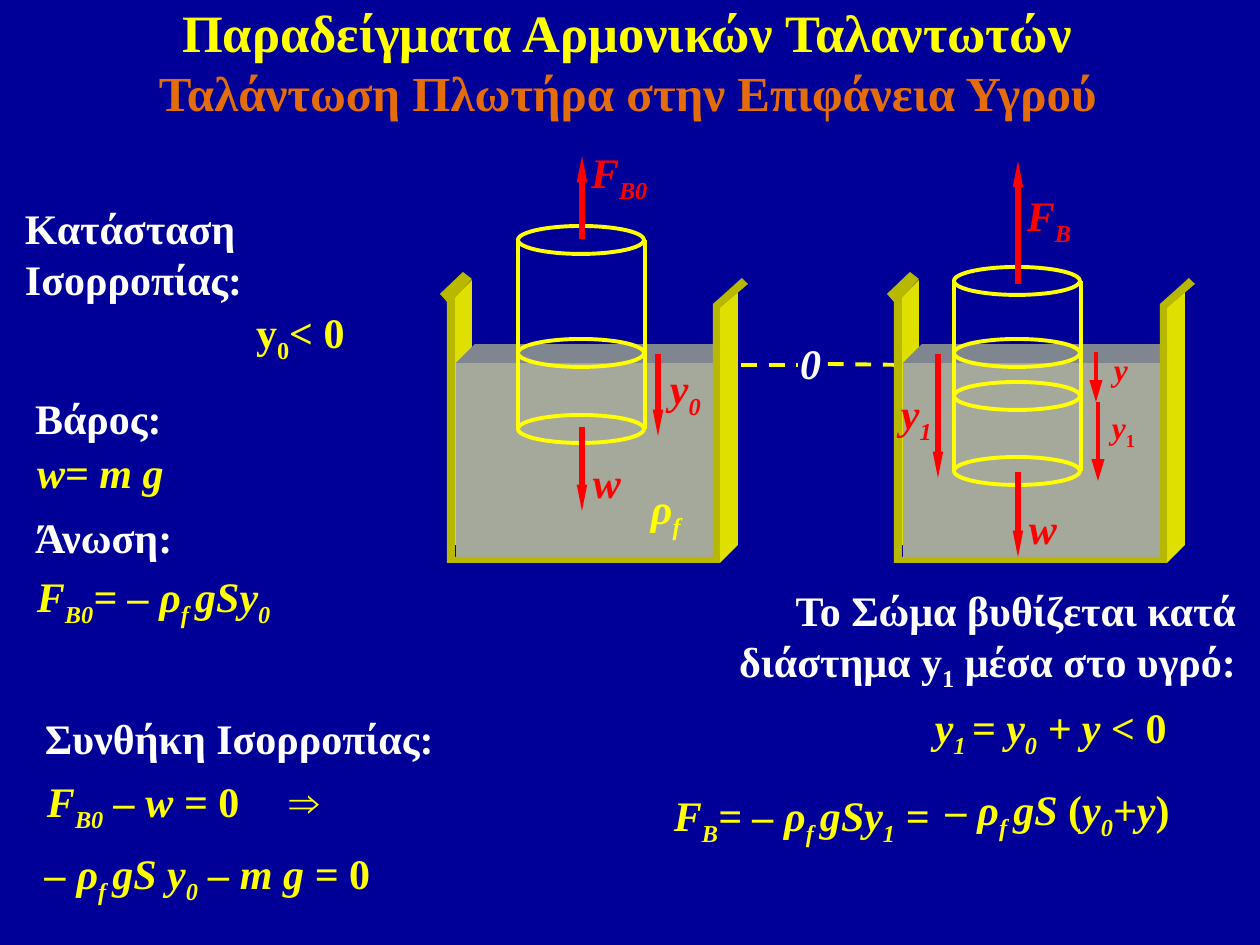
from dataclasses import dataclass

from lxml.etree import SubElement
from pptx import Presentation
from pptx.dml.color import RGBColor
from pptx.enum.dml import MSO_LINE
from pptx.enum.shapes import MSO_CONNECTOR, MSO_SHAPE
from pptx.enum.text import MSO_ANCHOR, MSO_AUTO_SIZE, PP_ALIGN
from pptx.oxml.ns import qn
from pptx.util import Emu, Pt

EMU_PER_PX = 914400 / 126
FONT = "Times New Roman"
NAVY = RGBColor(0x00, 0x00, 0x99)
YELLOW = RGBColor(0xFF, 0xFF, 0x00)
ORANGE = RGBColor(0xE4, 0x6C, 0x0A)
WHITE = RGBColor(0xFF, 0xFF, 0xFF)
RED = RGBColor(0xFF, 0x00, 0x00)
WALL_FRONT = RGBColor(0xB8, 0xB8, 0x00)
WALL_SIDE = RGBColor(0xE0, 0xE0, 0x00)
WATER_FRONT = RGBColor(0xA5, 0xA9, 0x9B)
WATER_TOP = RGBColor(0x80, 0x86, 0x90)


@dataclass
class Label:
    """Text in which "_" switches subscript and "/" switches italic."""
    text: str
    left: int
    top: int
    width: int
    color: RGBColor = YELLOW
    size: int = 24
    height: int = 50
    align: PP_ALIGN = PP_ALIGN.LEFT


@dataclass
class Line:
    x1: int
    y1: int
    x2: int
    y2: int
    color: RGBColor = RED
    weight: float = 3
    head_width: str = "sm"


@dataclass
class Cylinder:
    left: int
    rings: tuple[int, ...]


@dataclass
class Face:
    color: RGBColor
    points: tuple[tuple[int, int], ...]


TANK_STEP = 447
TANK_FACES = (
    Face(WALL_SIDE, ((451, 301), (472, 280), (472, 545), (451, 545))),
    Face(WATER_TOP, ((456, 363), (475, 344), (733, 344), (714, 363))),
    Face(WATER_FRONT, ((456, 363), (714, 363), (714, 557), (456, 557))),
    Face(WALL_FRONT, ((440, 294), (463, 272), (472, 279), (455, 298), (455, 557),
                      (719, 557), (719, 563), (447, 563), (447, 302))),
    Face(WALL_SIDE, ((720, 305), (738, 288), (738, 545), (720, 563))),
    Face(WALL_FRONT, ((713, 304), (742, 278), (748, 284), (720, 308),
                      (720, 563), (713, 563))),
)

RING_WIDTH, RING_HEIGHT = 126, 28
CYLINDERS = (
    Cylinder(518, (226, 339, 415)),
    Cylinder(954, (267, 339, 382, 457)),
)

LEVEL_LINES = (
    Line(714, 365, 798, 365, YELLOW, 2.25),
    Line(828, 364, 906, 365, YELLOW, 2.25),
)

ARROWS = (
    Line(582, 239, 582, 156),
    Line(582, 427, 582, 511),
    Line(658, 354, 658, 436),
    Line(1018, 284, 1018, 161),
    Line(1018, 472, 1018, 557),
    Line(938, 354, 938, 478),
    Line(1096, 352, 1096, 402, weight=2.5, head_width="med"),
    Line(1098, 402, 1098, 481, weight=2.5, head_width="med"),
)

LABELS = (
    Label("Κατάσταση\nΙσορροπίας:", 25, 203, 266, WHITE, height=102),
    Label("y_0_< 0", 256, 307, 107),
    Label("Βάρος:", 35, 393, 156, WHITE),
    Label("/w= m g", 37, 447, 247),
    Label("Άνωση:", 35, 512, 156, WHITE),
    Label("/F_B0_= – ρ_f _gSy_0", 37, 571, 265),
    Label("Συνθήκη Ισορροπίας:", 45, 713, 410, WHITE),
    Label("/F_B0_ – w = /0", 47, 776, 220),
    Label("/⇒", 290, 776, 50),
    Label("/– ρ_f _gS y_0_ – m g = /0", 45, 848, 348),
    Label("Το Σώμα βυθίζεται κατά διάστημα y_1_ μέσα στο υγρό:",
          665, 585, 571, WHITE, height=102, align=PP_ALIGN.RIGHT),
    Label("/y_1 _= y_0_ + y < /0", 935, 702, 243),
    Label("/F_B_= – ρ_f _gSy_1_ =", 674, 790, 265),
    Label("/– ρ_f _gS /(/y_0_+y/)", 946, 784, 242),
    Label("/0", 800, 338, 30, WHITE),
    Label("/F_B0", 591, 147, 68, RED),
    Label("/F_B", 1027, 190, 50, RED),
    Label("/w", 593, 457, 40, RED),
    Label("/w", 1029, 503, 40, RED),
    Label("/ρ_f", 651, 483, 40),
    Label("/y_0", 670, 363, 50, RED),
    Label("/y_1", 901, 388, 39, RED),
    Label("/y", 1114, 350, 26, RED, 18, 38),
    Label("/y/_1", 1112, 408, 36, RED, 18, 38),
)


def px(length: int) -> Emu:
    return Emu(round(length * EMU_PER_PX))


def apply(target, values: dict) -> None:
    for name, value in values.items():
        setattr(target, name, value)


def add_span(para, text: str, color: RGBColor, size: int, italic=False, subscript=False) -> None:
    span = para.add_run()
    span.text = text
    apply(span.font, {"name": FONT, "size": Pt(size), "bold": True, "italic": italic})
    span.font.color.rgb = color
    if subscript:
        span._r.get_or_add_rPr().set("baseline", "-25000")


def add_label(page, label: Label) -> None:
    box = page.shapes.add_textbox(*map(px, (label.left, label.top, label.width, label.height)))
    frame = box.text_frame
    apply(frame, {"margin_left": 0, "margin_top": 0, "margin_right": 0,
                  "margin_bottom": 0, "word_wrap": True})
    for index, line in enumerate(label.text.split("\n")):
        para = frame.add_paragraph() if index else frame.paragraphs[0]
        para.alignment = label.align
        italic = False
        for level, part in enumerate(line.split("_")):
            for turn, text in enumerate(part.split("/")):
                italic ^= turn > 0
                if text:
                    add_span(para, text, label.color, label.size, italic, level % 2 == 1)


def add_line(page, line: Line):
    connector = page.shapes.add_connector(
        MSO_CONNECTOR.STRAIGHT, *map(px, (line.x1, line.y1, line.x2, line.y2)))
    connector.line.color.rgb = line.color
    connector.line.width = Pt(line.weight)
    SubElement(connector._element.spPr, qn("a:effectLst"))
    return connector


def add_arrow(page, arrow: Line) -> None:
    outline = add_line(page, arrow).line._get_or_add_ln()
    SubElement(outline, qn("a:tailEnd"), type="triangle", w=arrow.head_width, len="lg")


def add_tank(page, shift: int) -> None:
    for face in TANK_FACES:
        points = [(px(x + shift), px(y)) for x, y in face.points]
        builder = page.shapes.build_freeform(*points[0], scale=1.0)
        builder.add_line_segments(points[1:], close=True)
        shape = builder.convert_to_shape()
        shape.shadow.inherit = False
        shape.fill.solid()
        shape.fill.fore_color.rgb = face.color
        shape.line.fill.background()


def add_cylinder(page, cylinder: Cylinder) -> None:
    for top in cylinder.rings:
        ring = page.shapes.add_shape(
            MSO_SHAPE.OVAL, *map(px, (cylinder.left, top, RING_WIDTH, RING_HEIGHT)))
        ring.shadow.inherit = False
        ring.fill.background()
        ring.line.color.rgb = YELLOW
        ring.line.width = Pt(2.25)
    middle = RING_HEIGHT // 2
    for x in (cylinder.left, cylinder.left + RING_WIDTH + 1):
        add_line(page, Line(x, cylinder.rings[0] + middle, x, cylinder.rings[-1] + middle,
                            YELLOW, 2.25))


def fill_heading(holder, text: str, top: int, color: RGBColor, size: int) -> None:
    apply(holder, {"left": px(5), "top": px(top), "width": px(1245), "height": px(59)})
    apply(holder.text_frame, {"vertical_anchor": MSO_ANCHOR.MIDDLE, "word_wrap": True,
                              "auto_size": MSO_AUTO_SIZE.NONE})
    para = holder.text_frame.paragraphs[0]
    apply(para, {"alignment": PP_ALIGN.CENTER, "line_spacing": 0.9, "space_before": Pt(0)})
    add_span(para, text, color, size)


def main() -> None:
    deck = Presentation()
    deck.slide_width, deck.slide_height = px(1260), px(945)
    page = deck.slides.add_slide(deck.slide_layouts[0])
    page.background.fill.solid()
    page.background.fill.fore_color.rgb = NAVY
    title, subtitle = page.placeholders
    fill_heading(title, "Παραδείγματα Αρμονικών Ταλαντωτών", 6, YELLOW, 30)
    fill_heading(subtitle, "Ταλάντωση Πλωτήρα στην Επιφάνεια Υγρού", 66, ORANGE, 28)
    for line in LEVEL_LINES:
        add_line(page, line).line.dash_style = MSO_LINE.DASH
    for index, cylinder in enumerate(CYLINDERS):
        add_tank(page, index * TANK_STEP)
        add_cylinder(page, cylinder)
    for arrow in ARROWS:
        add_arrow(page, arrow)
    for label in LABELS:
        add_label(page, label)
    deck.save("out.pptx")


if __name__ == "__main__":
    main()
